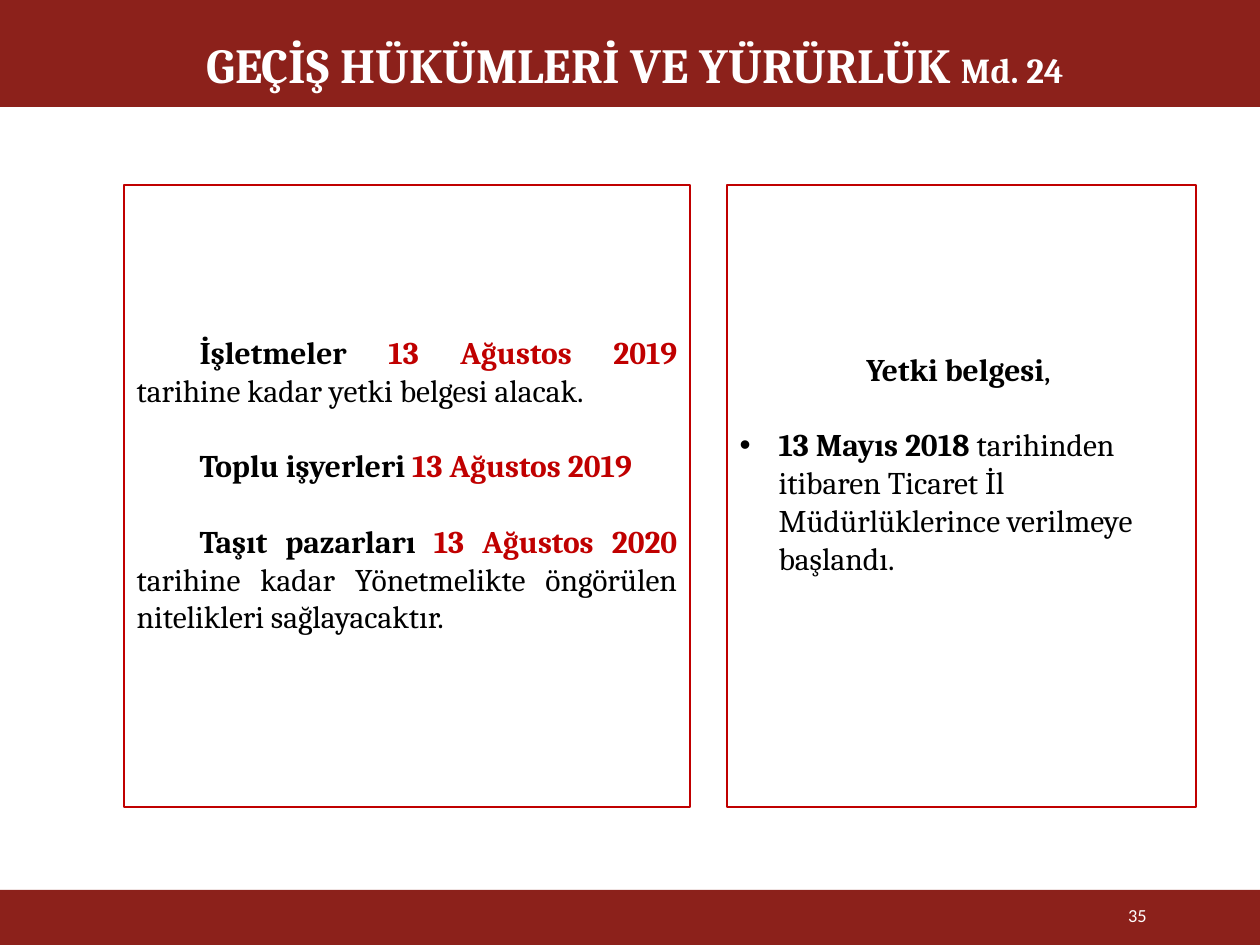
from dataclasses import dataclass

from lxml import etree
from pptx import Presentation
from pptx.dml.color import RGBColor
from pptx.enum.shapes import MSO_SHAPE
from pptx.enum.text import MSO_ANCHOR, MSO_AUTO_SIZE, PP_ALIGN
from pptx.oxml.ns import qn
from pptx.util import Emu, Pt

RECTANGLE = MSO_SHAPE.RECTANGLE
TOP, MIDDLE = MSO_ANCHOR.TOP, MSO_ANCHOR.MIDDLE
NO_AUTOFIT = MSO_AUTO_SIZE.NONE
LEFT, CENTER, RIGHT, JUSTIFY = PP_ALIGN.LEFT, PP_ALIGN.CENTER, PP_ALIGN.RIGHT, PP_ALIGN.JUSTIFY
PX_PER_INCH = 126
TWO_CONTENT = 3


@dataclass(frozen=True)
class Theme:
    """Colours, fonts and type sizes of the slide."""
    band: RGBColor = RGBColor(0x8C, 0x21, 0x1B)
    accent: RGBColor = RGBColor(0xC0, 0x00, 0x00)
    white: RGBColor = RGBColor(0xFF, 0xFF, 0xFF)
    black: RGBColor = RGBColor(0x00, 0x00, 0x00)
    serif: str = "Cambria"
    sans: str = "Calibri"
    title: float = 28
    article: float = 20
    body: float = 18
    number: float = 10.5
    border: float = 1.5
    blank_line: float = 21.5


THEME = Theme()


def px(length):
    """Turn whole pixels into EMU."""
    return Emu(round(length * 914400 / PX_PER_INCH))


def place(shape, box):
    """Move a shape to a (left, top, width, height) box."""
    shape.left, shape.top, shape.width, shape.height = map(px, box)


def add_run(paragraph, text, size, color, bold=False, font=THEME.serif):
    """Add one formatted run and return it."""
    run = paragraph.add_run()
    run.text = text
    run.font.size, run.font.name, run.font.bold = Pt(size), font, bold
    run.font.color.rgb = color
    return run


def add_band(slide, box):
    """Draw a coloured band behind everything else."""
    band = slide.shapes.add_shape(RECTANGLE, *map(px, box))
    band.shadow.inherit = False
    band.fill.solid()
    band.fill.fore_color.rgb = THEME.band
    band.line.fill.background()
    slide.shapes._spTree.insert(2, band._element)


def add_text_shadow(run):
    """Give a run a soft dark shadow."""
    effects = etree.Element(qn("a:effectLst"))
    shadow = etree.SubElement(effects, qn("a:outerShdw"), blurRad="38100", dist="38100",
                              dir="2700000", algn="tl")
    color = etree.SubElement(shadow, qn("a:srgbClr"), val="000000")
    etree.SubElement(color, qn("a:alpha"), val="43000")
    run.font._element.find(qn("a:solidFill")).addnext(effects)


def fill_heading(title, box):
    """Write the heading into the title placeholder."""
    place(title, box)
    frame = title.text_frame
    frame.auto_size, frame.vertical_anchor = NO_AUTOFIT, TOP
    frame.margin_top, frame.margin_bottom = px(8), 0
    heading = frame.paragraphs[0]
    heading.alignment = CENTER
    for text, size in (("GEÇİŞ HÜKÜMLERİ VE YÜRÜRLÜK ", THEME.title), ("Md. 24", THEME.article)):
        add_text_shadow(add_run(heading, text, size, THEME.white, True))


def set_bullet(paragraph, bullet, margin, indent):
    """Set the indents of a paragraph and its bullet, if any."""
    properties = paragraph._p.get_or_add_pPr()
    properties.set("marL", str(px(margin)))
    properties.set("indent", str(px(indent)))
    if bullet:
        etree.SubElement(properties, qn("a:buFont"), typeface="Arial")
        etree.SubElement(properties, qn("a:buChar"), char=bullet)
    else:
        etree.SubElement(properties, qn("a:buNone"))


def fill_panel(panel, box, lift, paragraphs):
    """Frame a body placeholder and write its paragraphs, raised by lift."""
    place(panel, box)
    panel.fill.solid()
    panel.fill.fore_color.rgb = THEME.white
    panel.line.color.rgb, panel.line.width = THEME.accent, Pt(THEME.border)
    frame = panel.text_frame
    frame.auto_size, frame.vertical_anchor = NO_AUTOFIT, MIDDLE
    frame.margin_bottom = px(6 + 2 * lift)
    for index, (alignment, bullet, margin, indent, runs) in enumerate(paragraphs):
        paragraph = frame.add_paragraph() if index else frame.paragraphs[0]
        paragraph.alignment = alignment
        paragraph.space_before = Pt(THEME.blank_line if index else 0)
        set_bullet(paragraph, bullet, margin, indent)
        for text, color, bold in runs:
            add_run(paragraph, text, THEME.body, color, bold)


def add_page_number(slide, box):
    """Write the page number in the lower band."""
    frame = slide.shapes.add_textbox(*map(px, box)).text_frame
    frame.word_wrap, frame.vertical_anchor = True, MIDDLE
    number = frame.paragraphs[0]
    number.alignment = RIGHT
    add_run(number, "35", THEME.number, THEME.white, font=THEME.sans)


def deadline(subject, date, duty):
    """Describe one indented deadline paragraph."""
    runs = [(subject, THEME.black, True), (date, THEME.accent, True)]
    if duty:
        runs.append((duty, THEME.black, False))
    return JUSTIFY, None, 0, 63, runs


def main():
    """Build the slide and save it."""
    deck = Presentation()
    deck.slide_width, deck.slide_height = px(1260), px(945)
    slide = deck.slides.add_slide(deck.slide_layouts[TWO_CONTENT])
    title, deadlines, licence = slide.placeholders
    for band in ((0, 0, 1260, 107), (0, 890, 1260, 55)):
        add_band(slide, band)
    fill_heading(title, (164, 27, 942, 59))
    fill_panel(deadlines, (124, 185, 566, 622), 12, [
        deadline("İşletmeler ", "13 Ağustos 2019 ", "tarihine kadar yetki belgesi alacak. "),
        deadline("Toplu işyerleri ", "13 Ağustos 2019", ""),
        deadline("Taşıt pazarları ", "13 Ağustos 2020",
                 " tarihine kadar Yönetmelikte öngörülen nitelikleri sağlayacaktır."),
    ])
    fill_panel(licence, (727, 185, 469, 622), 33, [
        (CENTER, None, 0, 0, [("Yetki belgesi", THEME.black, True), (", ", THEME.black, False)]),
        (LEFT, "•", 39, -39, [
            ("13 Mayıs 2018 ", THEME.black, True),
            ("tarihinden itibaren Ticaret İl Müdürlüklerince verilmeye başlandı.",
             THEME.black, False),
        ]),
    ])
    add_page_number(slide, (1023, 890, 136, 51))
    deck.save("out.pptx")


if __name__ == "__main__":
    main()
